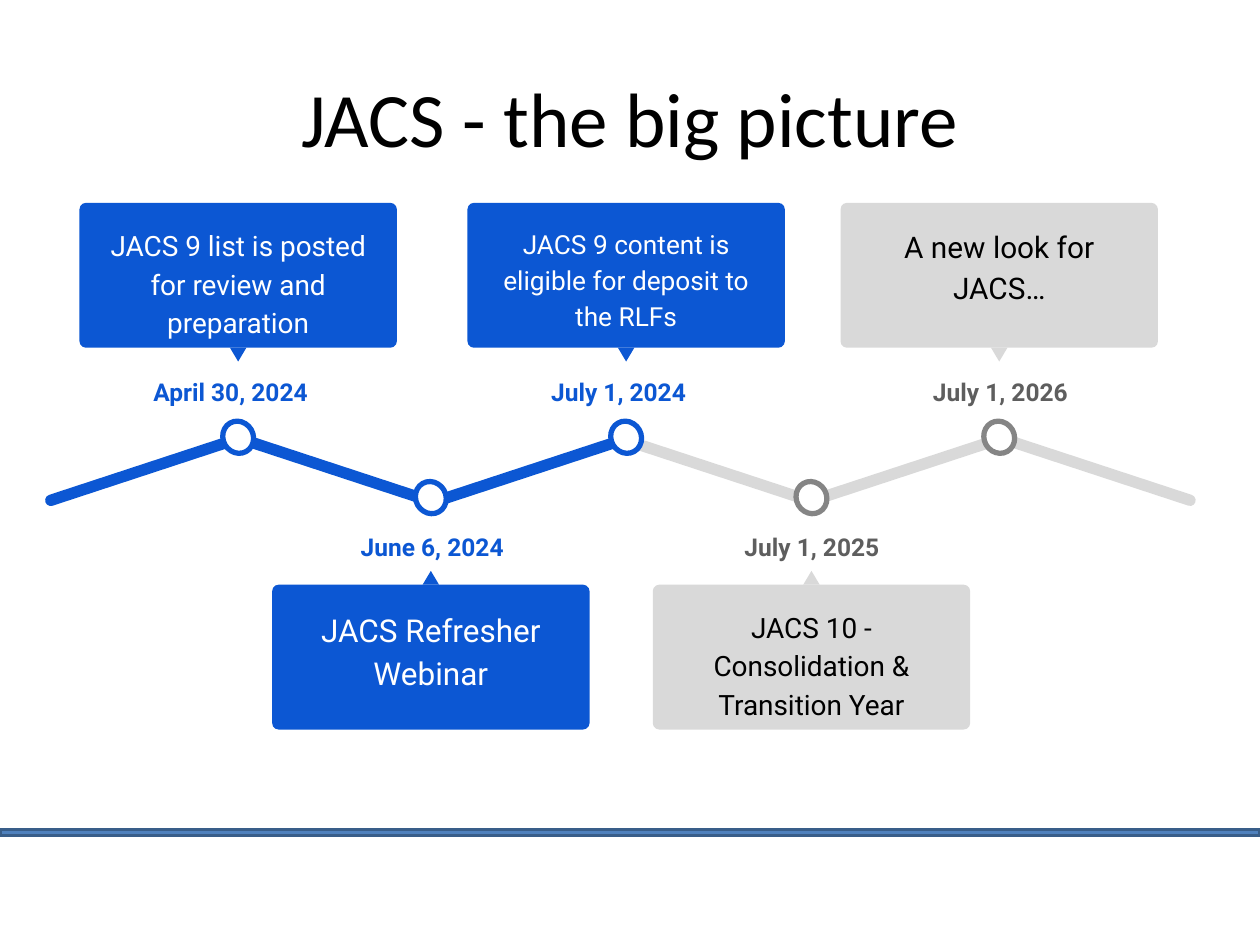
import pptx
import pptx.util
import pptx.dml.color
import pptx.enum.shapes
import pptx.enum.text

Pt = pptx.util.Pt
SHAPE = pptx.enum.shapes.MSO_SHAPE
ALIGN = pptx.enum.text.PP_ALIGN
ANCHOR = pptx.enum.text.MSO_ANCHOR

COLORS = {
    "blue": "0C57D3", "pale": "D9D9D9", "ring": "858585", "date": "5E5E5E",
    "white": "FFFFFF", "black": "000000", "bar": "4F81BD", "bar_edge": "395E89",
}
DONE = {"main": "blue", "ring": "blue", "date": "blue", "text": "white"}
AHEAD = {"main": "pale", "ring": "ring", "date": "date", "text": "black"}
ABOVE = {"box": 115.9, "tip": 198.7, "date": 205.9, "dot": 240.5, "turn": 180}
BELOW = {"box": 334.1, "tip": 326.2, "date": 294.5, "dot": 275, "turn": 0}
BOX_W, BOX_H, PAD = 181.4, 82.8, 4.6


class Timeline:
    def __init__(self, prs):
        self.slide = prs.slides.add_slide(prs.slide_layouts[5])
        self.shapes = self.slide.shapes

    def color(self, name):
        return pptx.dml.color.RGBColor.from_string(COLORS[name])

    def run(self, p, text, size, color, font="Roboto", bold=False):
        r = p.add_run()
        r.text = text
        r.font.name = font
        r.font.size = Pt(size)
        r.font.bold = bold
        r.font.color.rgb = self.color(color)

    def title(self, text):
        sp = self.slide.shapes.title
        sp.left, sp.top, sp.width, sp.height = Pt(36), Pt(21.6), Pt(648), Pt(90)
        tf = sp.text_frame
        tf.vertical_anchor = ANCHOR.MIDDLE
        p = tf.paragraphs[0]
        p.alignment = ALIGN.CENTER
        self.run(p, text, 44, "black", "Calibri")

    def shape(self, kind, x, y, w, h, fill, line=None, weight=0, turn=0, corner=None):
        sp = self.shapes.add_shape(kind, Pt(x), Pt(y), Pt(w), Pt(h))
        sp.shadow.inherit = False
        sp.rotation = turn
        sp.fill.solid()
        sp.fill.fore_color.rgb = self.color(fill)
        if line:
            sp.line.color.rgb = self.color(line)
            sp.line.width = Pt(weight)
        else:
            sp.line.fill.background()
        if corner is not None:
            sp.adjustments[0] = corner

    def text(self, x, y, w, h, text, size, color, bold=False):
        tf = self.shapes.add_textbox(Pt(x), Pt(y), Pt(w), Pt(h)).text_frame
        tf.word_wrap = True
        tf.margin_left = tf.margin_right = Pt(7.2)
        tf.margin_top = tf.margin_bottom = Pt(7.2)
        p = tf.paragraphs[0]
        p.alignment = ALIGN.CENTER
        p.line_spacing = 1.15
        self.run(p, text, size, color, bold=bold)

    def segment(self, x, turn, color):
        self.shape(SHAPE.ROUNDED_RECTANGLE, x, 265, 119.5, 6.5, color, turn=turn, corner=0.5)

    def milestone(self, x, side, style, date, date_x, date_w, text, size):
        self.shapes = self.slide.shapes.add_group_shape().shapes
        left = x - BOX_W / 2
        self.shape(SHAPE.ROUNDED_RECTANGLE, left, side["box"], BOX_W, BOX_H,
                   style["main"], corner=0.045)
        self.text(left + PAD, side["box"] + PAD, BOX_W - 2 * PAD, BOX_H - 2 * PAD,
                  text, size, style["text"])
        self.shape(SHAPE.ISOSCELES_TRIANGLE, x - 4.7, side["tip"], 9.4, 7.9,
                   style["main"], turn=side["turn"])
        self.text(date_x - date_w / 2, side["date"], date_w, 32.4, date, 14,
                  style["date"], bold=True)
        self.shape(SHAPE.OVAL, x - 8.65, side["dot"], 17.3, 18.7, "white",
                   style["ring"], 3, turn=330.2)
        self.shapes = self.slide.shapes


def main():
    prs = pptx.Presentation()
    prs.slide_width, prs.slide_height = Pt(720), Pt(540)
    s = Timeline(prs)
    s.shape(SHAPE.RECTANGLE, 0, 473.9, 720, 3.6, "bar", "bar_edge", 2)
    s.title("JACS - the big picture")

    for i, x in enumerate([23, 131, 244.8, 348.5, 458.6, 566.6]):
        s.segment(x, 18.2 if i % 2 else -18.2, "blue" if i < 3 else "pale")

    milestones = [
        (136.1, ABOVE, DONE, "April 30, 2024", 131.8, 148.3,
         "JACS 9 list is posted for review and preparation", 16),
        (246.2, BELOW, DONE, "June 6, 2024", 247, 115.2,
         "JACS Refresher Webinar", 18),
        (357.8, ABOVE, DONE, "July 1, 2024", 353.5, 148.3,
         "JACS 9 content is eligible for deposit to the RLFs", 15),
        (463.7, BELOW, AHEAD, "July 1, 2025", 464, 104.4,
         "JACS 10 - Consolidation & Transition Year", 16),
        (571, ABOVE, AHEAD, "July 1, 2026", 571.7, 125.3,
         "A new look for JACS…", 17),
    ]
    for milestone in milestones:
        s.milestone(*milestone)
    prs.save("out.pptx")


if __name__ == "__main__":
    main()
